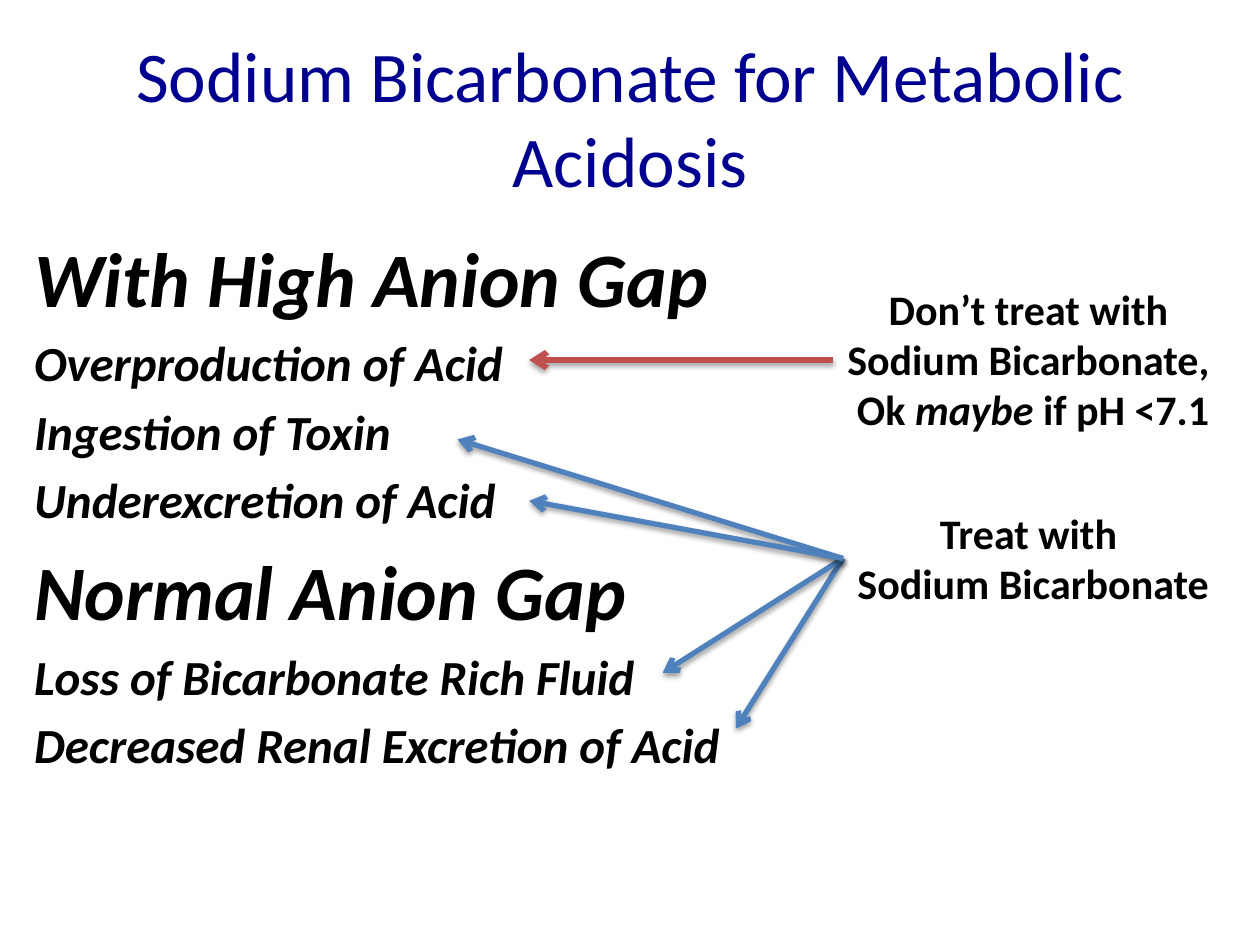
import dataclasses

import lxml.etree
import pptx
import pptx.dml.color
import pptx.enum.shapes
import pptx.enum.text
import pptx.oxml
import pptx.oxml.ns
import pptx.util

WIDTH, HEIGHT = 10, 7.5


@dataclasses.dataclass(frozen=True)
class Theme:
    font: str = "Calibri"
    ink: str = "000000"
    title_ink: str = "000090"
    treat: str = "4F81BD"
    avoid: str = "C0504D"
    title_size: float = 40.7
    heading_size: float = 44
    item_size: float = 28
    note_size: float = 24


THEME = Theme()

CAUSES = {
    "With High Anion Gap": [
        "Overproduction of Acid",
        "Ingestion of Toxin",
        "Underexcretion of Acid",
    ],
    "Normal Anion Gap": [
        "Loss of Bicarbonate Rich Fluid",
        "Decreased Renal Excretion of Acid",
    ],
}

SHADOW = (
    '<a:effectLst xmlns:a="http://schemas.openxmlformats.org/drawingml/2006/main">'
    '<a:outerShdw blurRad="40000" dist="20000" dir="5400000" rotWithShape="0">'
    '<a:srgbClr val="000000"><a:alpha val="38000"/></a:srgbClr>'
    "</a:outerShdw></a:effectLst>"
)


def across(share):
    return pptx.util.Inches(share * WIDTH)


def down(share):
    return pptx.util.Inches(share * HEIGHT)


def place(box, left, top, width, height):
    box.left, box.top = across(left), down(top)
    box.width, box.height = across(width), down(height)


def style(span, size, color, bold=False, italic=False):
    span.font.name = THEME.font
    span.font.size = pptx.util.Pt(size)
    span.font.color.rgb = pptx.dml.color.RGBColor.from_string(color)
    span.font.bold = bold
    span.font.italic = italic


def fill_title(box, text):
    place(box, 0.05, 0.04, 0.9, 1 / 6)
    box.text_frame.text = text
    box.text_frame.auto_size = pptx.enum.text.MSO_AUTO_SIZE.NONE
    style(box.text_frame.paragraphs[0].runs[0], THEME.title_size, THEME.title_ink)


def fill_causes(box, causes):
    place(box, 0.017, 0.237, 0.9, 0.617)
    frame = box.text_frame
    frame.text = "\n".join(line for head, items in causes.items() for line in [head, *items])
    frame.auto_size = pptx.enum.text.MSO_AUTO_SIZE.NONE
    for para in frame.paragraphs:
        properties = para._p.get_or_add_pPr()
        properties.set("marL", "0")
        properties.set("indent", "0")
        lxml.etree.SubElement(properties, pptx.oxml.ns.qn("a:buNone"))
        size = THEME.heading_size if para.text in causes else THEME.item_size
        style(para.runs[0], size, THEME.ink, bold=True, italic=True)


def add_note(page, area, lines, stressed=""):
    box = page.shapes.add_textbox(0, 0, 0, 0)
    place(box, *area)
    frame = box.text_frame
    frame.word_wrap = False
    frame.auto_size = pptx.enum.text.MSO_AUTO_SIZE.SHAPE_TO_FIT_TEXT
    for number, pieces in enumerate(lines):
        para = frame.add_paragraph() if number else frame.paragraphs[0]
        para.alignment = pptx.enum.text.PP_ALIGN.CENTER
        for piece in pieces:
            span = para.add_run()
            span.text = piece
            style(span, THEME.note_size, THEME.ink, bold=True, italic=piece == stressed)


def add_arrow(page, start, end, color, weight):
    arrow = page.shapes.add_connector(
        pptx.enum.shapes.MSO_CONNECTOR.STRAIGHT,
        across(start[0]), down(start[1]), across(end[0]), down(end[1]),
    )
    arrow.line.color.rgb = pptx.dml.color.RGBColor.from_string(color)
    arrow.line.width = pptx.util.Pt(weight)
    head = lxml.etree.SubElement(arrow.line._get_or_add_ln(), pptx.oxml.ns.qn("a:tailEnd"))
    head.set("type", "arrow")
    arrow._element.spPr.append(pptx.oxml.parse_xml(SHADOW))


def main():
    deck = pptx.Presentation()
    deck.slide_width, deck.slide_height = across(1), down(1)
    page = deck.slides.add_slide(deck.slide_layouts[1])
    fill_title(page.shapes.title, "Sodium Bicarbonate for Metabolic Acidosis")
    fill_causes(page.placeholders[1], CAUSES)

    add_note(page, (0.669, 0.53, 0.302, 0.121), [["Treat with "], ["Sodium Bicarbonate"]])
    for end in [(0.584, 0.771), (0.526, 0.712), (0.363, 0.465), (0.42, 0.53)]:
        add_arrow(page, (0.669, 0.591), end, THEME.treat, 3)

    add_note(
        page,
        (0.661, 0.293, 0.318, 0.175),
        [["Don’t treat with "], ["Sodium Bicarbonate, "], ["Ok ", "maybe ", "if pH <7.1"]],
        stressed="maybe ",
    )
    add_arrow(page, (0.661, 0.381), (0.42, 0.381), THEME.avoid, 3.25)
    deck.save("out.pptx")


if __name__ == "__main__":
    main()
